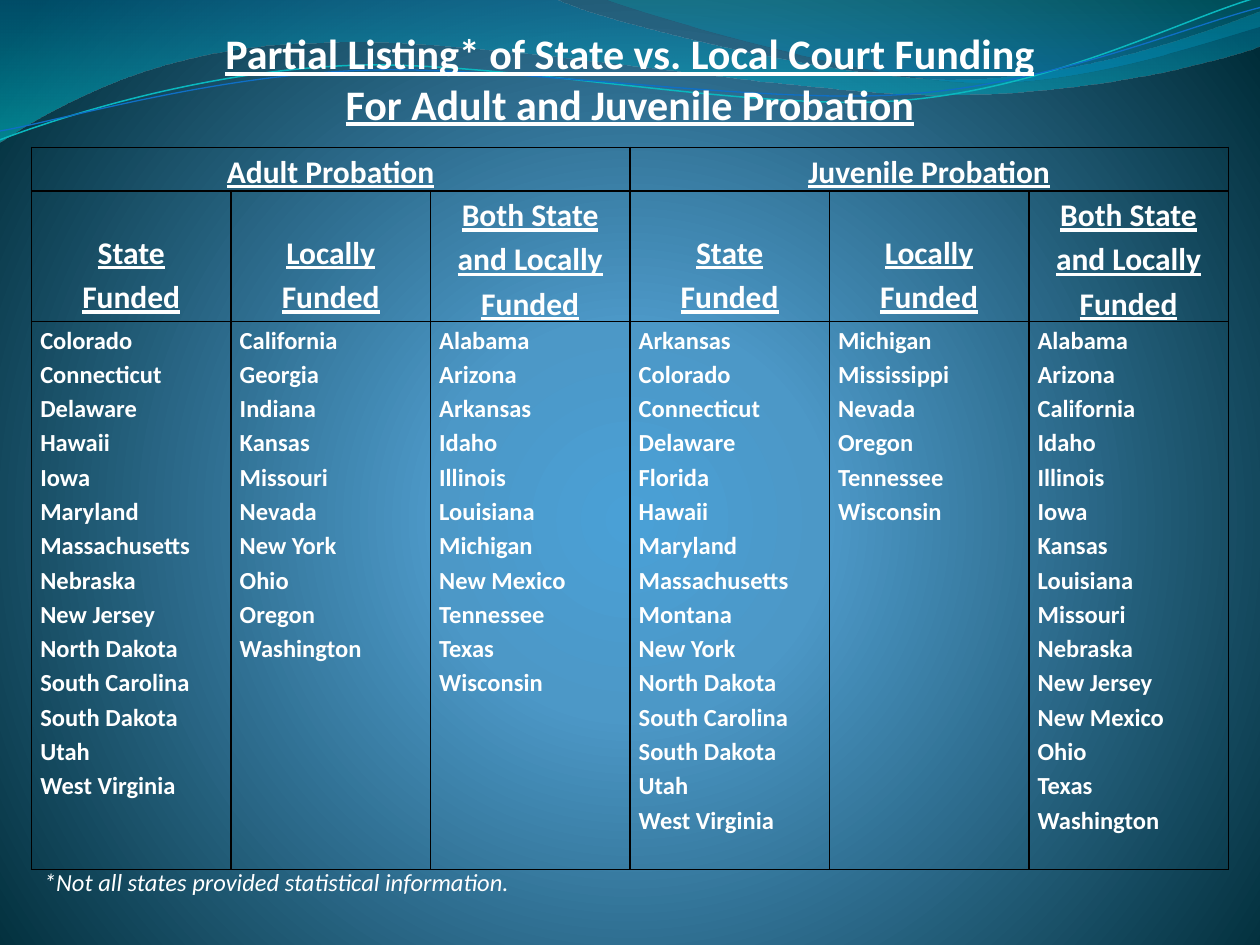
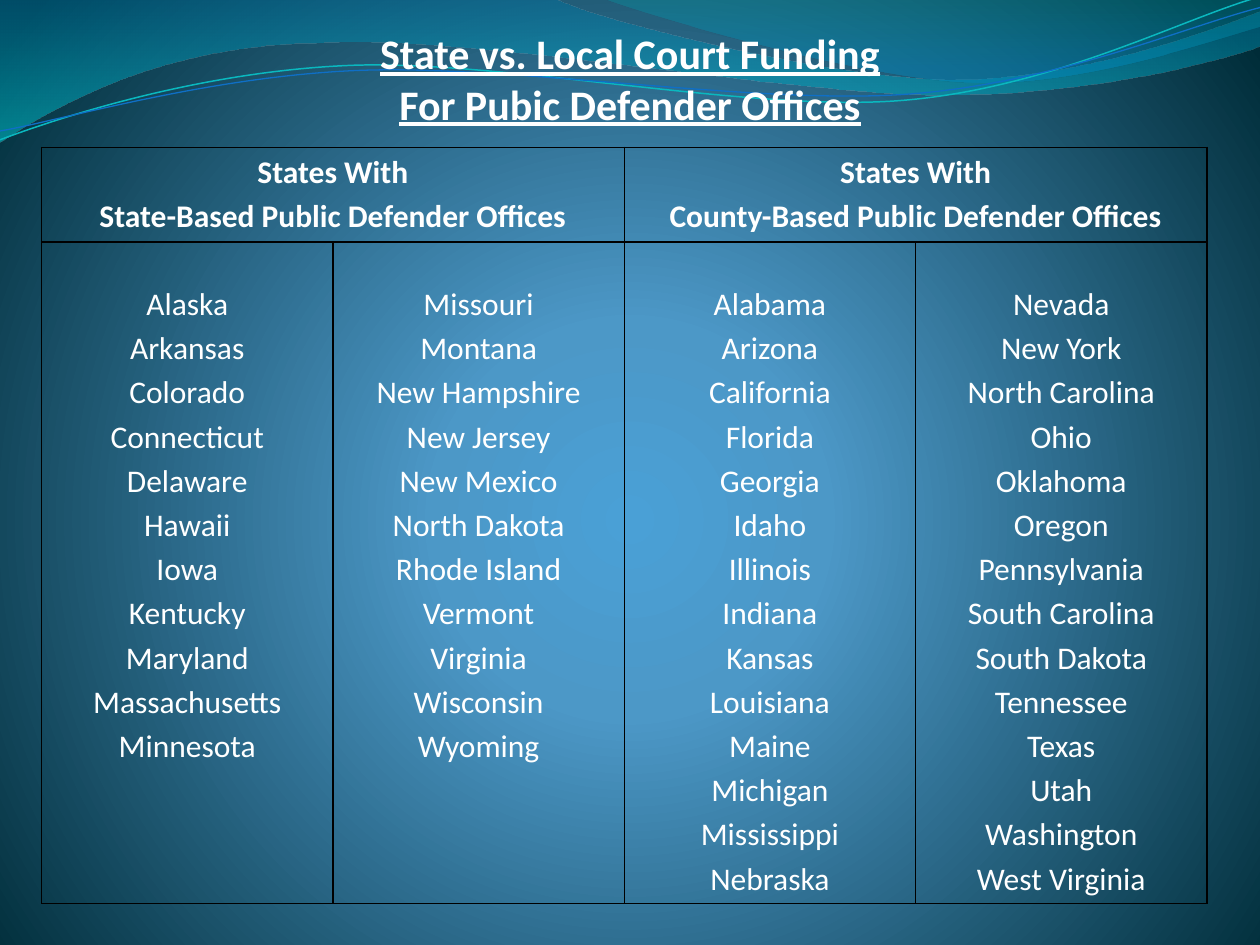
from dataclasses import dataclass

from lxml import etree
from pptx import Presentation
from pptx.dml.color import RGBColor
from pptx.enum.text import MSO_ANCHOR, PP_ALIGN
from pptx.oxml.ns import nsdecls, qn
from pptx.util import Inches, Pt

LEFT, CENTER = PP_ALIGN.LEFT, PP_ALIGN.CENTER
TOP, MIDDLE = MSO_ANCHOR.TOP, MSO_ANCHOR.MIDDLE


@dataclass(frozen=True)
class Theme:
    font: str = "Calibri"
    ink: str = "FFFFFF"
    rule: str = "000000"
    rule_wide: float = 1
    title: int = 24
    head: int = 18
    small: int = 14
    lead: float = 1.15
    pad: float = 0.07
    drop: float = 0.3
    glow: tuple = ((0, "4AA0D6", 100), (25, "4C98C7", 100), (100, "002C38", 100))
    wave: tuple = ((0, "0074A1", 45), (100, "00C6CF", 55))
    crest: tuple = ((0, "00A1A9", 30), (80, "008BBF", 45))
    teal: str = "0AB8BF"
    blue: str = "0F6FC6"


THEME = Theme()
RADIAL = '<a:path path="circle"><a:fillToRect l="10000" t="110000" r="10000" b="100000"/></a:path>'
LINEAR = '<a:lin ang="5400000" scaled="1"/>'

WAVE = [(0, -0.01), (4.4, -0.01), (4.76, 0.17, 6.64, 0.63, 7.58, 0.63),
        (8.53, 0.63, 9.58, 0.26, 10, 0.09), (10.01, 0.36),
        (9.83, 0.44, 8.7, 0.76, 7.46, 0.75), (6.22, 0.75, 3.82, 0.28, 2.57, 0.34),
        (1.29, 0.35, 0.46, 0.83, -0.01, 1.13), (0, -0.01)]
CREST = [(4.79, -0.01), (5.09, 0.11, 6.82, 0.62, 7.69, 0.65),
         (8.56, 0.69, 9.61, 0.32, 10, 0.21), (10, 0), (4.79, -0.01)]
UPPER = [(0, 1.11), (0.48, 0.93, 1.58, 0.57, 2.77, 0.52),
         (3.95, 0.47, 5.93, 0.89, 7.13, 0.8), (8.33, 0.71, 9.38, 0.15, 9.98, -0.02)]
LOWER = [(0, 1.04), (0.47, 0.96, 1.64, 0.61, 2.83, 0.56),
         (4.03, 0.51, 5.97, 0.83, 7.17, 0.75), (8.36, 0.67, 9.41, 0.21, 10, 0.06)]

FUNDS = [["State", "Funded"], ["Locally Funded"], ["Both State and Locally Funded"]]
COURTS = [
    "Colorado, Connecticut, Delaware, Hawaii, Iowa, Maryland, Massachusetts, Nebraska, "
    "New Jersey, North Dakota, South Carolina, South Dakota, Utah, West Virginia",
    "California, Georgia, Indiana, Kansas, Missouri, Nevada, New York, Ohio, Oregon, Washington",
    "Alabama, Arizona, Arkansas, Idaho, Illinois, Louisiana, Michigan, New Mexico, "
    "Tennessee, Texas, Wisconsin",
    "Arkansas, Colorado, Connecticut, Delaware, Florida, Hawaii, Maryland, Massachusetts, "
    "Montana, New York, North Dakota, South Carolina, South Dakota, Utah, West Virginia",
    "Michigan, Mississippi, Nevada, Oregon, Tennessee, Wisconsin",
    "Alabama, Arizona, California, Idaho, Illinois, Iowa, Kansas, Louisiana, Missouri, "
    "Nebraska, New Jersey, New Mexico, Ohio, Texas, Washington",
]
OFFICES = [
    "Alaska, Arkansas, Colorado, Connecticut, Delaware, Hawaii, Iowa, Kentucky, Maryland, "
    "Massachusetts, Minnesota",
    "Missouri, Montana, New Hampshire, New Jersey, New Mexico, North Dakota, Rhode Island, "
    "Vermont, Virginia, Wisconsin, Wyoming",
    "Alabama, Arizona, California, Florida, Georgia, Idaho, Illinois, Indiana, Kansas, "
    "Louisiana, Maine, Michigan, Mississippi, Nebraska",
    "Nevada, New York, North Carolina, Ohio, Oklahoma, Oregon, Pennsylvania, South Carolina, "
    "South Dakota, Tennessee, Texas, Utah, Washington, West Virginia",
]


def blend(parent, stops, shade):
    marks = "".join(
        f'<a:gs pos="{pos * 1000}"><a:srgbClr val="{tint}"><a:alpha val="{alpha * 1000}"/>'
        f"</a:srgbClr></a:gs>" for pos, tint, alpha in stops)
    grad = etree.fromstring(
        f'<a:gradFill {nsdecls("a")} rotWithShape="1"><a:gsLst>{marks}</a:gsLst>{shade}</a:gradFill>')
    parent.replace(parent.find(qn("a:solidFill")), grad)


def curve(slide, steps, close):
    start, *rest = [tuple(map(Inches, step[-2:])) for step in steps]
    pen = slide.shapes.build_freeform(*start)
    pen.add_line_segments(rest, close=close)
    shape = pen.convert_to_shape()
    shape.shadow.inherit = False
    lines = list(shape.element.iter(qn("a:lnTo")))
    for step, line in zip(steps[1:], lines):
        if len(step) == 6:
            points = "".join(
                f'<a:pt x="{Inches(x) - shape.left}" y="{Inches(y) - shape.top}"/>'
                for x, y in zip(step[::2], step[1::2]))
            bend = etree.fromstring(
                f'<a:cubicBezTo {nsdecls("a")}>{points}</a:cubicBezTo>')
            line.getparent().replace(line, bend)
    return shape


def scene(master, slide):
    master.background.fill.solid()
    blend(master.element.find(".//" + qn("p:bgPr")), THEME.glow, RADIAL)
    shapes = []
    for steps, stops in ((WAVE, THEME.wave), (CREST, THEME.crest)):
        shape = curve(slide, steps, True)
        shape.line.fill.background()
        shape.fill.solid()
        blend(shape.element.spPr, stops, LINEAR)
        shapes.append(shape)
    for steps, tint, wide in ((UPPER, THEME.teal, 0.85), (LOWER, THEME.blue, 0.75)):
        shape = curve(slide, steps, False)
        shape.fill.background()
        shape.line.color.rgb = RGBColor.from_string(tint)
        shape.line.width = Pt(wide)
        shapes.append(shape)
    tree = master.element.find(".//" + qn("p:spTree"))
    for mark, shape in enumerate(shapes, 20):
        shape.element.find(".//" + qn("p:cNvPr")).set("id", str(mark))
        tree.append(shape.element)


def write(frame, lines, size, align=CENTER, lead=1.0, bold=False, under=False, slant=False):
    frame.word_wrap = True
    for i, line in enumerate(lines):
        para = frame.add_paragraph() if i else frame.paragraphs[0]
        para.alignment = align
        para.line_spacing = lead
        run = para.add_run()
        run.text = line
        font = run.font
        font.name, font.size = THEME.font, Pt(size)
        font.bold, font.underline, font.italic = bold, under, slant
        font.color.rgb = RGBColor.from_string(THEME.ink)


def label(slide, box, lines, size, anchor=TOP, foot=0.05, **style):
    frame = slide.shapes.add_textbox(*map(Inches, box)).text_frame
    frame.vertical_anchor = anchor
    frame.margin_bottom = Inches(foot)
    write(frame, lines, size, **style)


def title(slide, lines):
    label(slide, (0, 0.17, 10, 1.24), lines, THEME.title, anchor=MIDDLE, foot=0.39,
          bold=True, under=True)


def grid(slide, box, count, rows):
    table = slide.shapes.add_table(len(rows), count, *map(Inches, box)).table
    table.first_row = table.horz_banding = False
    for col in table.columns:
        col.width = Inches(box[2] / count)
    for row, high in zip(table.rows, rows):
        row.height = Inches(high)
        for cell in row.cells:
            frame_cell(cell)
    return table


def frame_cell(cell):
    cell.margin_left = cell.margin_right = Inches(THEME.pad)
    cell.margin_top = cell.margin_bottom = 0
    props = cell._tc.get_or_add_tcPr()
    for side in "LRTB":
        props.append(etree.fromstring(
            f'<a:ln{side} {nsdecls("a")} w="{Pt(THEME.rule_wide)}"><a:solidFill>'
            f'<a:srgbClr val="{THEME.rule}"/></a:solidFill></a:ln{side}>'))
    cell.fill.background()


def fill_cell(cell, lines, size, drop=False, **style):
    cell.margin_top = Inches(THEME.drop if drop else 0)
    write(cell.text_frame, lines, size, lead=THEME.lead, **style)


def heads(table, groups, span, **style):
    for i, lines in enumerate(groups):
        first = table.cell(0, i * span)
        first.merge(table.cell(0, (i + 1) * span - 1))
        fill_cell(first, lines, THEME.head, bold=True, **style)


def court_slide(slide):
    title(slide, ["Partial Listing* of State vs. Local Court Funding",
                  "For Adult and Juvenile Probation"])
    label(slide, (0.25, 6.83, 4.58, 0.34),
          ["*Not all states provided statistical information."],
          THEME.small, align=LEFT, slant=True)
    table = grid(slide, (0.25, 1.17, 9.5, 5.73), len(COURTS), (0.32, 1, 4.35))
    heads(table, [["Adult Probation"], ["Juvenile Probation"]], len(FUNDS), under=True)
    for i, states in enumerate(COURTS):
        kind = i % len(FUNDS)
        fill_cell(table.cell(1, i), FUNDS[kind], THEME.head, drop=kind < 2,
                  bold=True, under=True)
        fill_cell(table.cell(2, i), states.split(", "), THEME.small, align=LEFT, bold=True)


def office_slide(slide):
    title(slide, ["State vs. Local Court Funding", "For Pubic Defender Offices"])
    table = grid(slide, (0.33, 1.17, 9.25, 6), len(OFFICES), (0.75, 5.25))
    heads(table, [["States With", f"{base}-Based Public Defender Offices"]
                  for base in ("State", "County")], 2)
    for i, states in enumerate(OFFICES):
        fill_cell(table.cell(1, i), states.split(", "), THEME.head, drop=True)


def main():
    deck = Presentation()
    deck.slide_width, deck.slide_height = Inches(10), Inches(7.5)
    blank = deck.slide_layouts[6]
    court, office = (deck.slides.add_slide(blank) for _ in range(2))
    scene(deck.slide_master, court)
    court_slide(court)
    office_slide(office)
    deck.save("out.pptx")


if __name__ == "__main__":
    main()
